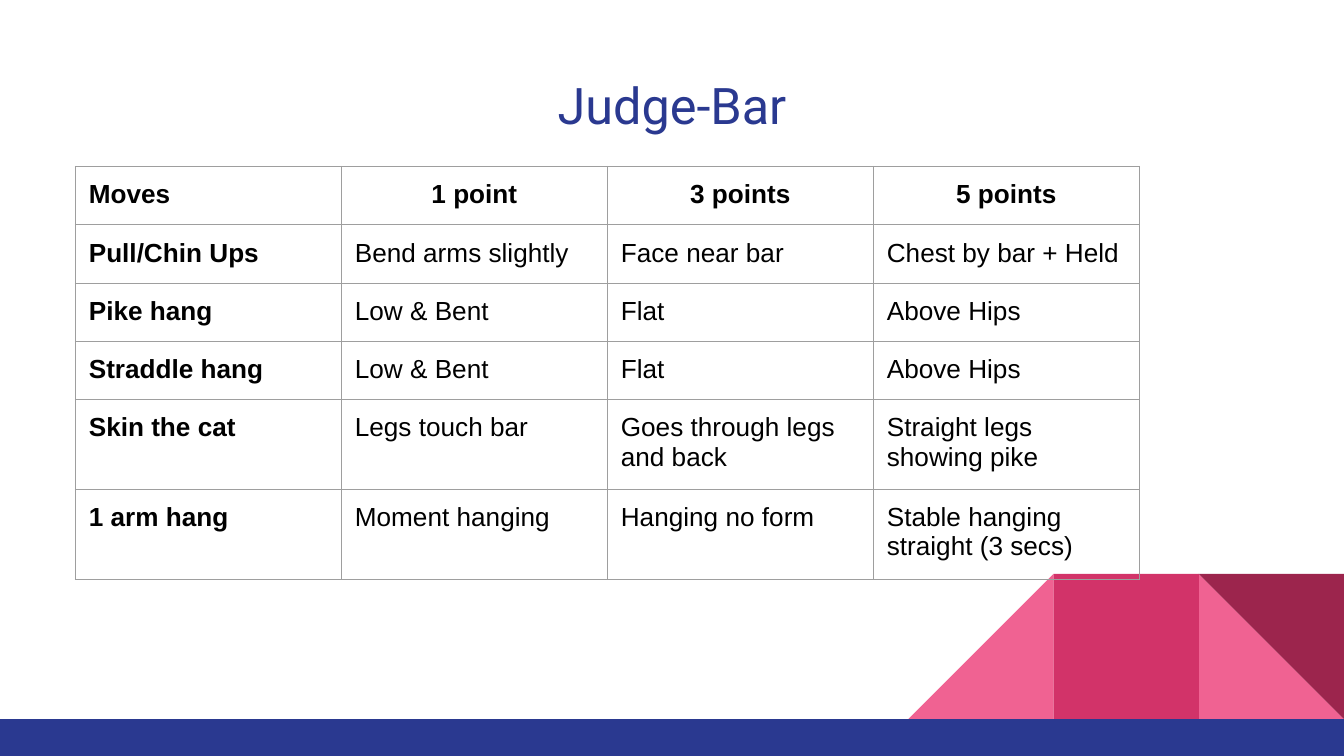
"""Build the Judge-Bar scoring slide."""
from lxml.etree import SubElement
from pptx import Presentation
from pptx.dml.color import RGBColor
from pptx.enum.shapes import MSO_SHAPE as Shape
from pptx.enum.text import MSO_ANCHOR as Anchor, PP_ALIGN as Align
from pptx.oxml import parse_xml
from pptx.oxml.ns import nsdecls, qn
from pptx.util import Pt

BLUE = RGBColor(0x2A, 0x39, 0x90)
PINK = RGBColor(0xF0, 0x62, 0x92)
ROSE = RGBColor(0xD2, 0x33, 0x69)
WINE = RGBColor(0x9C, 0x25, 0x4D)
GREY = RGBColor(0x9E, 0x9E, 0x9E)
BLACK = RGBColor(0, 0, 0)

WIDTH, HEIGHT = 720, 405
TILE = 77.8
BAR_TOP = 385.2
INSET = 7.2
COL_WIDTH, ROW_HEIGHT = 142.5, 30

SCORES = [
    ["Moves", "1 point", "3 points", "5 points"],
    ["Pull/Chin Ups", "Bend arms slightly", "Face near bar", "Chest by bar + Held"],
    ["Pike hang", "Low & Bent", "Flat", "Above Hips"],
    ["Straddle hang", "Low & Bent", "Flat", "Above Hips"],
    ["Skin the cat", "Legs touch bar", "Goes through legs and back", "Straight legs showing pike"],
    ["1 arm hang", "Moment hanging", "Hanging no form", "Stable hanging straight (3 secs)"],
]


def add_block(s, kind, x, y, w, h, color, rotation=0):
    sp = s.shapes.add_shape(kind, Pt(x), Pt(y), Pt(w), Pt(h))
    sp.shadow.inherit = False
    sp.fill.solid()
    sp.fill.fore_color.rgb = color
    sp.line.fill.background()
    sp.rotation = rotation


def add_decoration(s):
    left, middle, right = (WIDTH - n * TILE for n in (3, 2, 1))
    for kind, x, color, rotation in [
        (Shape.RIGHT_TRIANGLE, right, PINK, 0),
        (Shape.RIGHT_TRIANGLE, left, PINK, 270),
        (Shape.RECTANGLE, middle, ROSE, 0),
        (Shape.RIGHT_TRIANGLE, right, WINE, 180),
    ]:
        add_block(s, kind, x, BAR_TOP - TILE, TILE, TILE, color, rotation)
    add_block(s, Shape.RECTANGLE, 0, BAR_TOP, WIDTH, HEIGHT - BAR_TOP, BLUE)


def set_insets(box):
    box.margin_left = box.margin_right = Pt(INSET)
    box.margin_top = box.margin_bottom = Pt(INSET)


def format_text(p, font, size, color, bold, align):
    p.alignment = align
    for r in p.runs:
        r.font.name = font
        r.font.size = Pt(size)
        r.font.bold = bold
        r.font.color.rgb = color


def add_title(s, text):
    sp = s.shapes.add_textbox(Pt(24.5), Pt(32.4), Pt(671), Pt(47.5))
    tf = sp.text_frame
    tf.word_wrap = True
    tf.vertical_anchor = Anchor.MIDDLE
    set_insets(tf)
    tf.text = text
    format_text(tf.paragraphs[0], "Roboto", 27, BLUE, False, Align.CENTER)


def set_borders(cell):
    tc_pr = cell._tc.get_or_add_tcPr()
    for i, side in enumerate(("lnL", "lnR", "lnT", "lnB")):
        ln = parse_xml(f'<a:{side} {nsdecls("a")} w="{Pt(0.75)}"/>')
        fill = SubElement(ln, qn("a:solidFill"))
        SubElement(fill, qn("a:srgbClr"), val=str(GREY))
        tc_pr.insert(i, ln)


def add_score_table(s):
    rows, cols = len(SCORES), len(SCORES[0])
    frame = s.shapes.add_table(rows, cols, Pt(40.4), Pt(89.2),
                               Pt(cols * COL_WIDTH), Pt(rows * ROW_HEIGHT))
    table = frame.table
    table.first_row = table.horz_banding = False
    for row in table.rows:
        row.height = Pt(ROW_HEIGHT)
    for i, texts in enumerate(SCORES):
        for j, text in enumerate(texts):
            cell = table.cell(i, j)
            cell.fill.background()
            set_borders(cell)
            set_insets(cell)
            cell.text_frame.text = text
            align = Align.CENTER if i == 0 and j > 0 else Align.LEFT
            format_text(cell.text_frame.paragraphs[0], "Arial", 14, BLACK,
                        i == 0 or j == 0, align)


def main():
    prs = Presentation()
    prs.slide_width, prs.slide_height = Pt(WIDTH), Pt(HEIGHT)
    s = prs.slides.add_slide(prs.slide_layouts[6])
    add_decoration(s)
    add_title(s, "Judge-Bar")
    add_score_table(s)
    prs.save("out.pptx")


if __name__ == "__main__":
    main()
